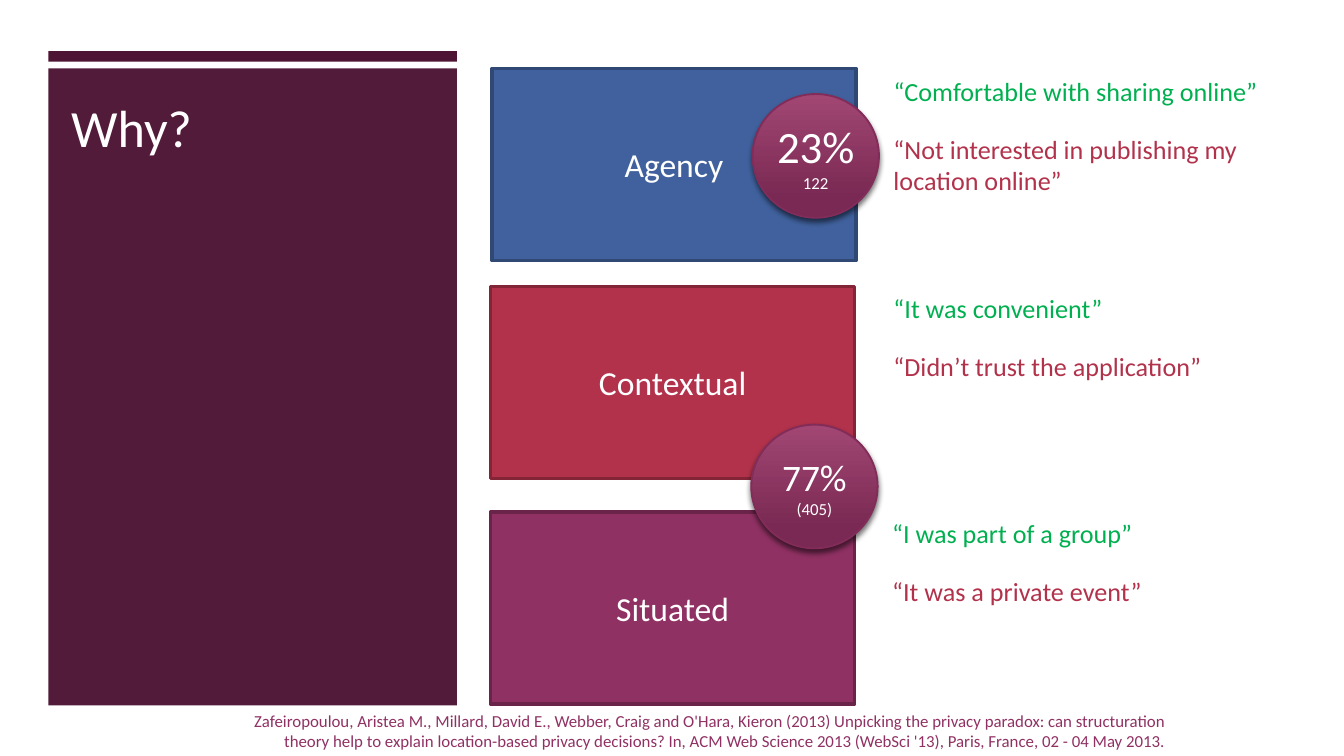
from dataclasses import dataclass

from lxml import etree
from pptx import Presentation
from pptx.dml.color import RGBColor
from pptx.enum.shapes import MSO_SHAPE
from pptx.enum.text import MSO_ANCHOR, PP_ALIGN
from pptx.oxml.ns import qn
from pptx.util import Inches, Pt

RECT, OVAL = MSO_SHAPE.RECTANGLE, MSO_SHAPE.OVAL
TOP, MIDDLE = MSO_ANCHOR.TOP, MSO_ANCHOR.MIDDLE
LEFT, CENTER, RIGHT = PP_ALIGN.LEFT, PP_ALIGN.CENTER, PP_ALIGN.RIGHT


@dataclass(frozen=True)
class Theme:
    font: str = "Calibri"
    white: str = "FFFFFF"
    panel: str = "4D1434"
    blue: str = "40619D"
    navy: str = "2F4874"
    red: str = "B2324B"
    maroon: str = "842537"
    plum: str = "903163"
    wine: str = "6B2449"
    green: str = "00B050"
    light: str = "A24774"
    dark: str = "792953"
    rim: str = "822C59"
    title: int = 28
    label: int = 18
    quote: int = 14
    small: int = 9


THEME = Theme()


def rgb(color):
    return RGBColor.from_string(color)


def write(shape, lines, color, align=LEFT, anchor=TOP):
    """Fill a shape with (text, size) lines."""
    frame = shape.text_frame
    frame.word_wrap = True
    frame.vertical_anchor = anchor
    frame.text = "\n".join(text for text, size in lines)
    for para, (text, size) in zip(frame.paragraphs, lines):
        para.alignment = align
        font = para.runs[0].font
        font.name, font.size = THEME.font, Pt(size)
        font.color.rgb = rgb(color)


def add_shape(slide, kind, box, fill=None, line=None, width=1.75):
    shape = slide.shapes.add_shape(kind, *map(Inches, box))
    shape.shadow.inherit = False
    if fill:
        shape.fill.solid()
        shape.fill.fore_color.rgb = rgb(fill)
    if line:
        shape.line.color.rgb = rgb(line)
        shape.line.width = Pt(width)
    else:
        shape.line.fill.background()
    return shape


def add_text(slide, box, text, size, color, align=LEFT):
    shape = slide.shapes.add_textbox(*map(Inches, box))
    write(shape, [(text, size)], color, align)


def set_alpha(node, percent):
    etree.SubElement(node, qn("a:alpha"), val=str(percent * 1000))


def add_panel(slide, box, text):
    """Place the dark side panel, the bar above it and the slide title."""
    left, top, width, height = box
    panel = add_shape(slide, RECT, (left, top + 0.13, width, height - 0.13), THEME.panel)
    set_alpha(panel.element.spPr.find(".//" + qn("a:srgbClr")), 97)
    bar = add_shape(slide, RECT, (left, top, width, 0.08), THEME.panel)

    title = slide.shapes.title
    title.left, title.top = Inches(left + 0.07), Inches(top + 0.26)
    title.width, title.height = Inches(2.8), Inches(3.85)
    write(title, [(text, THEME.title)], THEME.white)
    title.text_frame.margin_top = Inches(0.07)
    title.text_frame.paragraphs[0].line_spacing = 1.0
    bar.element.addnext(title.element)


def add_card(slide, box, label, fill, line):
    card = add_shape(slide, RECT, box, fill, line)
    write(card, [(label, THEME.label)], THEME.white, CENTER, MIDDLE)


def add_quotes(slide, box, pro, con):
    """Place a quote for sharing above a quote against it."""
    left, top, width, height = box
    add_text(slide, (left, top, width, 0.34), pro, THEME.quote, THEME.green)
    add_text(slide, (left, top + 0.43, 3.27, height), con, THEME.quote, THEME.red)


def add_badge(slide, box, share, size, count):
    badge = add_shape(slide, OVAL, box, line=THEME.rim, width=1)
    badge.fill.gradient()
    badge.fill.gradient_angle = 270
    stops = ((0, THEME.light), (0.84, THEME.dark))
    for stop, (place, color) in zip(badge.fill.gradient_stops, stops):
        stop.position = place
        stop.color.rgb = rgb(color)

    effects = badge.element.spPr.find(qn("a:effectLst"))
    shadow = etree.SubElement(
        effects, qn("a:outerShdw"), blurRad=str(Pt(3)), dist=str(Pt(2)),
        dir="5400000", rotWithShape="0")
    set_alpha(etree.SubElement(shadow, qn("a:srgbClr"), val="000000"), 55)

    frame = badge.text_frame
    frame.margin_left = frame.margin_right = 0
    write(badge, [(share, size), (count, THEME.small)], THEME.white, CENTER, MIDDLE)


def main():
    deck = Presentation()
    deck.slide_width = Inches(10)
    deck.slide_height = deck.slide_width * 9 // 16
    slide = deck.slides.add_slide(deck.slide_layouts[5])

    add_panel(slide, (0.36, 0.38, 3.04, 4.87), "Why?")
    add_text(
        slide, (1.48, 5.24, 7.28, 0.4),
        "Zafeiropoulou, Aristea M., Millard, David E., Webber, Craig and O'Hara, "
        "Kieron (2013) Unpicking the privacy paradox: can structuration theory help "
        "to explain location-based privacy decisions? In, ACM Web Science 2013 "
        "(WebSci '13), Paris, France, 02 - 04 May 2013.",
        THEME.small, THEME.plum, RIGHT)

    cards = (
        (3.66, 0.51, "Agency", THEME.blue, THEME.navy),
        (3.65, 2.13, "Contextual", THEME.red, THEME.maroon),
        (3.65, 3.81, "Situated", THEME.plum, THEME.wine),
    )
    for left, top, label, fill, line in cards:
        add_card(slide, (left, top, 2.71, 1.43), label, fill, line)

    quotes = (
        ((6.55, 0.51, 2.95, 0.57), "“Comfortable with sharing online”",
         "“Not interested in publishing my location online”"),
        ((6.55, 2.13, 1.76, 0.34), "“It was convenient”",
         "“Didn’t trust the application”"),
        ((6.54, 3.8, 2.02, 0.34), "“I was part of a group”",
         "“It was a private event”"),
    )
    for box, pro, con in quotes:
        add_quotes(slide, box, pro, con)

    add_badge(slide, (5.6, 0.7, 0.94, 0.92), "23%", 24, "122")
    add_badge(slide, (5.59, 3.16, 0.94, 0.92), "77%", 20, "(405)")
    deck.save("out.pptx")


if __name__ == "__main__":
    main()
